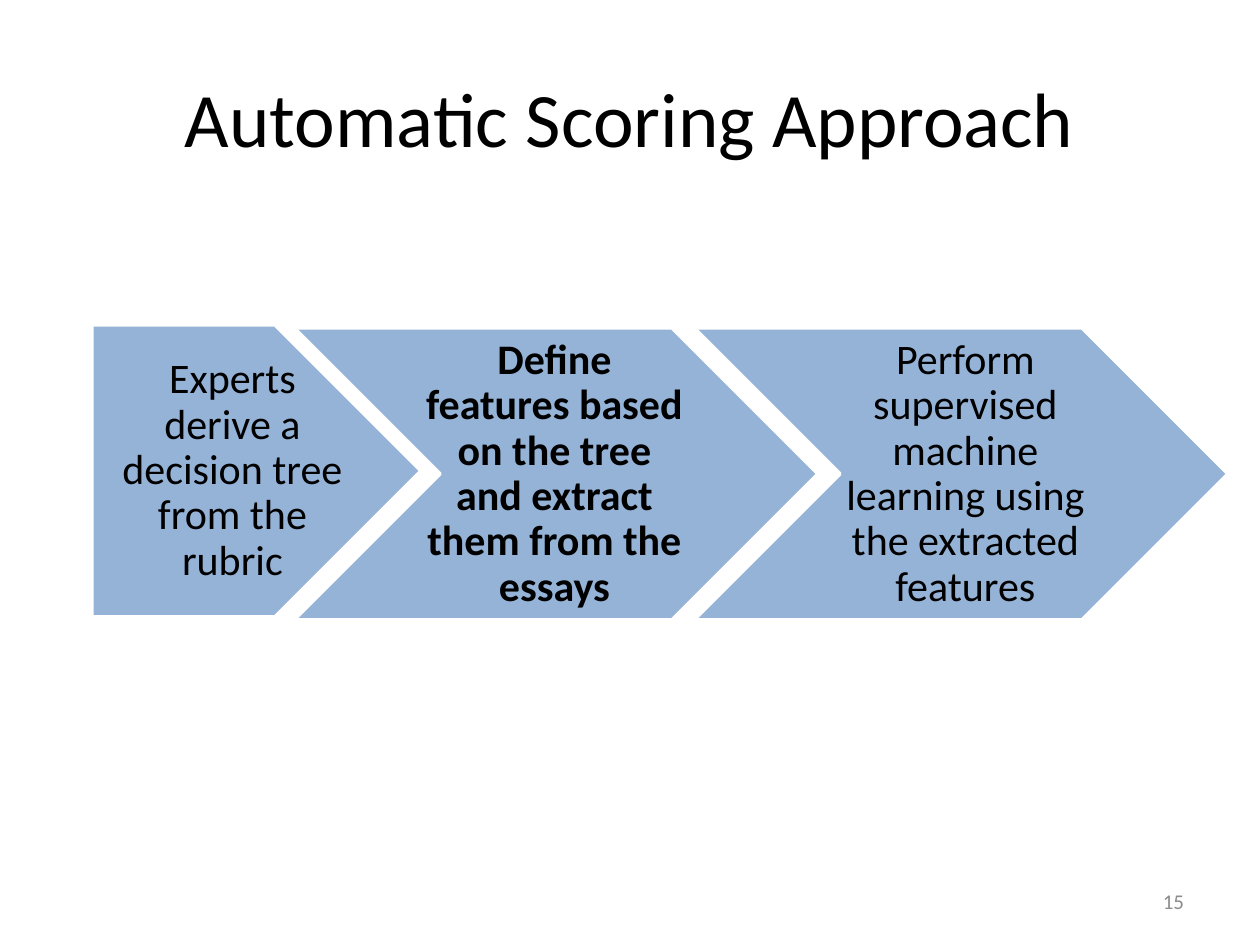
import pptx
import pptx.dml.color
import pptx.enum.shapes
import pptx.enum.text
import pptx.util
from dataclasses import dataclass

PX = 914400 // 126  # EMU per px
SHAPES = pptx.enum.shapes.MSO_SHAPE
ALIGN = pptx.enum.text.PP_ALIGN


@dataclass(frozen=True)
class Theme:
    font: str = "Calibri"
    ink: str = "000000"
    muted: str = "8C8C8C"
    arrow: str = "95B3D7"
    outline: str = "FFFFFF"
    title_size: int = 44
    step_size: int = 24
    number_size: int = 12
    outline_width: int = 2


class SlideBuilder:
    def __init__(self, slide, theme):
        self.slide = slide
        self.theme = theme

    def color(self, value):
        return pptx.dml.color.RGBColor.from_string(value)

    def box(self, left, top, width, height):
        return [round(value * PX) for value in (left, top, width, height)]

    def text(self, area, words, size, color, align=ALIGN.CENTER, bold=False,
             insets=(13, 6, 13, 6), spacing=1.0):
        frame = self.slide.shapes.add_textbox(*self.box(*area)).text_frame
        frame.word_wrap = True
        frame.vertical_anchor = pptx.enum.text.MSO_ANCHOR.MIDDLE
        (frame.margin_left, frame.margin_top,
         frame.margin_right, frame.margin_bottom) = self.box(*insets)
        paragraph = frame.paragraphs[0]
        paragraph.alignment = align
        paragraph.line_spacing = spacing
        run = paragraph.add_run()
        run.text = words
        run.font.name = self.theme.font
        run.font.size = pptx.util.Pt(size)
        run.font.bold = bold
        run.font.color.rgb = self.color(color)

    def arrow(self, kind, area):
        arrow = self.slide.shapes.add_shape(kind, *self.box(*area))
        arrow.shadow.inherit = False
        arrow.fill.solid()
        arrow.fill.fore_color.rgb = self.color(self.theme.arrow)
        arrow.line.color.rgb = self.color(self.theme.outline)
        arrow.line.width = pptx.util.Pt(self.theme.outline_width)

    def step(self, kind, left, top, width, text_left, text_width,
             inset, words, bold=False):
        height = 292
        self.arrow(kind, (left, top, width, height))
        self.text((text_left, top, text_width, height), words,
                  self.theme.step_size, self.theme.ink, bold=bold,
                  insets=(inset, 10, 5, 10), spacing=0.9)


def main():
    deck = pptx.Presentation()
    deck.slide_width = pptx.util.Inches(10)
    deck.slide_height = pptx.util.Inches(7.5)
    theme = Theme()
    builder = SlideBuilder(deck.slides.add_slide(deck.slide_layouts[6]), theme)

    # Title
    builder.text((63, 38, 1134, 158), "Automatic Scoring Approach",
                 theme.title_size, theme.ink)

    # Process steps, left to right
    builder.step(SHAPES.PENTAGON, 92, 325, 329, 92, 266, 20,
                 "Experts derive a decision tree from the rubric")
    builder.step(SHAPES.CHEVRON, 294, 328, 524, 406, 287, 15,
                 "Define features based on the tree and extract them "
                 "from the essays", bold=True)
    builder.step(SHAPES.CHEVRON, 694, 328, 534, 820, 281, 15,
                 "Perform supervised machine learning using the "
                 "extracted features")

    # Slide number
    builder.text((903, 876, 294, 50), "15", theme.number_size, theme.muted,
                 align=ALIGN.RIGHT)

    deck.save("out.pptx")


if __name__ == "__main__":
    main()
